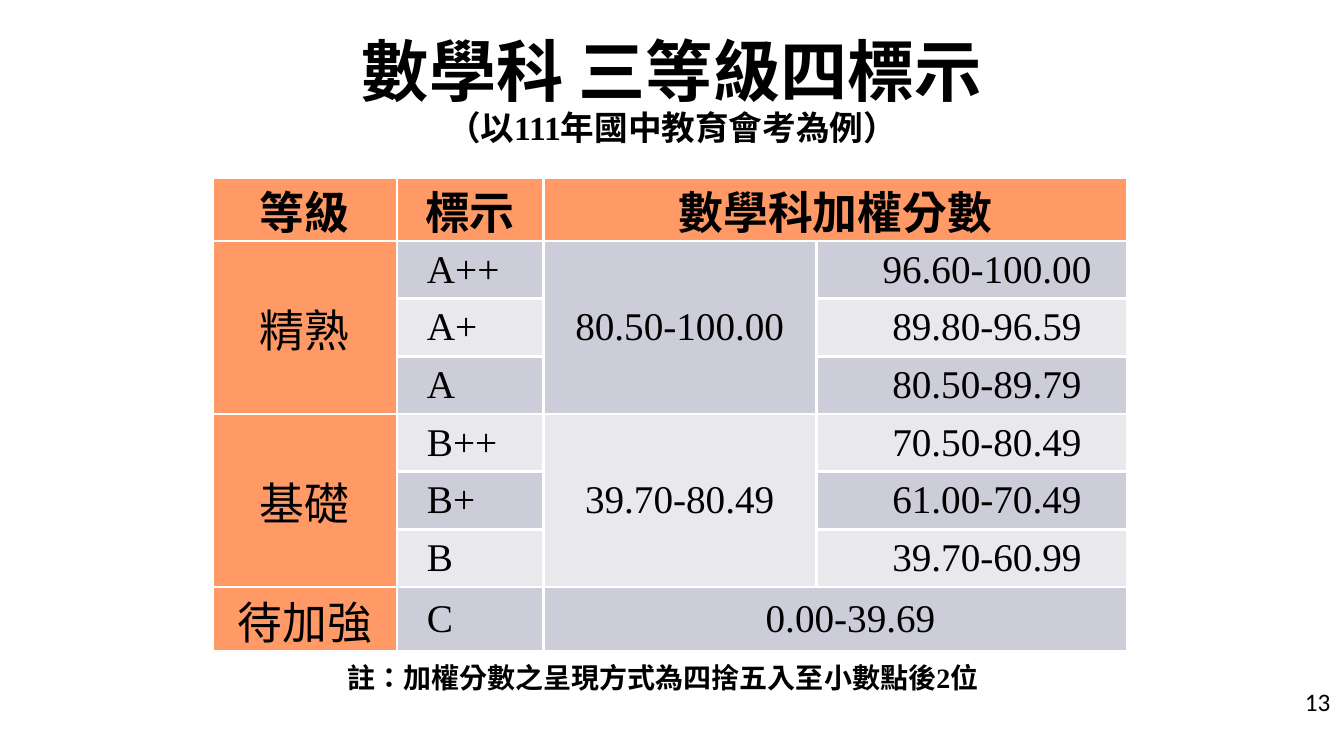
import dataclasses
import typing

import lxml.etree
import pptx
import pptx.dml.color
import pptx.enum.lang
import pptx.enum.text
import pptx.oxml.ns
import pptx.util

Pt = pptx.util.Pt
RGB = pptx.dml.color.RGBColor
Align = pptx.enum.text.PP_ALIGN
Anchor = pptx.enum.text.MSO_ANCHOR
Lang = pptx.enum.lang.MSO_LANGUAGE_ID
qn = pptx.oxml.ns.qn

BLACK = RGB(0x00, 0x00, 0x00)
WHITE = RGB(0xFF, 0xFF, 0xFF)
ORANGE = RGB(0xFF, 0x99, 0x66)
DARK = RGB(0xCD, 0xCD, 0xDA)
LIGHT = RGB(0xE8, 0xE8, 0xED)

SERIF = "Times New Roman"
SANS = "Noto Sans CJK SC"

WIDTHS = (131.5, 104.5, 195, 222.5)
HEIGHTS = (45.5, *[41.2] * 6, 46)
EDGE = 1.5


@dataclasses.dataclass
class Entry:
    row: int
    col: int
    text: str
    size: float = 28
    bold: bool = False
    align: Align = Align.CENTER
    left: float = EDGE
    right: float = EDGE
    down: int = 1
    across: int = 1


@dataclasses.dataclass
class Level:
    name: str
    total: str
    marks: tuple[tuple[str, str], ...]


LEVELS = (
    Level("精熟", "80.50-100.00", (
        ("A++", "96.60-100.00"), ("A+", "89.80-96.59"), ("A", "80.50-89.79"))),
    Level("基礎", "39.70-80.49", (
        ("B++", "70.50-80.49"), ("B+", "61.00-70.49"), ("B", "39.70-60.99"))),
    Level("待加強", "0.00-39.69", (("C", ""),)),
)


def write(para: typing.Any, text: str, *, size: float, font: str = SERIF,
          bold: bool = False, align: Align = Align.LEFT) -> None:
    """Add a run to the paragraph, with the sans face for Chinese letters."""
    para.alignment = align
    run = para.add_run()
    run.text = text
    run.font.size = Pt(size)
    run.font.name = font
    run.font.bold = bold
    run.font.color.rgb = BLACK
    run.font.language_id = Lang.TRADITIONAL_CHINESE
    latin = run.font._element.find(qn("a:latin"))
    east = lxml.etree.Element(qn("a:ea"), typeface=SANS)
    latin.addnext(east)


def add_box(slide: typing.Any, left: float, top: float, width: float,
            height: float, anchor: Anchor = Anchor.TOP) -> typing.Any:
    frame = slide.shapes.add_textbox(
        Pt(left), Pt(top), Pt(width), Pt(height)).text_frame
    frame.word_wrap = True
    frame.vertical_anchor = anchor
    return frame


def rule(cell: typing.Any) -> None:
    """Give the cell white borders on all four sides."""
    props = cell._tc.get_or_add_tcPr()
    for spot, side in enumerate(("lnL", "lnR", "lnT", "lnB")):
        line = lxml.etree.Element(qn(f"a:{side}"), w=str(Pt(2.25)))
        fill = lxml.etree.SubElement(line, qn("a:solidFill"))
        lxml.etree.SubElement(fill, qn("a:srgbClr"), val=str(WHITE))
        props.insert(spot, line)


def list_cells() -> list[Entry]:
    cells = [
        Entry(0, 0, "等級", 32, True),
        Entry(0, 1, "標示", 32, True),
        Entry(0, 2, "數學科加權分數", 32, True, across=2),
    ]
    row = 1
    for level in LEVELS:
        count = len(level.marks)
        single = count == 1
        cells.append(Entry(row, 0, level.name, 32, down=count))
        cells.append(Entry(row, 2, level.total, down=count,
                           across=2 if single else 1,
                           left=23 if single else EDGE))
        for step, (mark, score) in enumerate(level.marks):
            cells.append(Entry(row + step, 1, mark,
                               align=Align.LEFT, left=21.5))
            if score:
                cells.append(Entry(row + step, 3, score, left=26.5, right=5))
        row += count
    return cells


def draw_table(slide: typing.Any) -> None:
    table = slide.shapes.add_table(
        len(HEIGHTS), len(WIDTHS), Pt(152), Pt(126.75),
        Pt(sum(WIDTHS)), Pt(sum(HEIGHTS))).table
    table.first_row = False
    table.horz_banding = False
    for col, width in zip(table.columns, WIDTHS):
        col.width = Pt(width)
    for row, height in zip(table.rows, HEIGHTS):
        row.height = Pt(height)
    for r in range(len(HEIGHTS)):
        for c in range(len(WIDTHS)):
            cell = table.cell(r, c)
            cell.fill.solid()
            band = DARK if r % 2 else LIGHT
            cell.fill.fore_color.rgb = ORANGE if r == 0 or c == 0 else band
            rule(cell)
    for item in list_cells():
        cell = table.cell(item.row, item.col)
        if item.down > 1 or item.across > 1:
            cell.merge(table.cell(item.row + item.down - 1,
                                  item.col + item.across - 1))
        cell.vertical_anchor = Anchor.MIDDLE
        cell.margin_left, cell.margin_right = Pt(item.left), Pt(item.right)
        cell.margin_top = cell.margin_bottom = Pt(0)
        write(cell.text_frame.paragraphs[0], item.text, size=item.size,
              bold=item.bold, align=item.align)


def draw_title(slide: typing.Any) -> None:
    frame = add_box(slide, 48, 21.5, 864, 90, Anchor.MIDDLE)
    para = frame.paragraphs[0]
    para.line_spacing = 0.9
    write(para, "數學科 三等級四標示", size=48, font=SANS, bold=True,
          align=Align.CENTER)
    para.add_line_break()
    parts = (("（以", SANS), ("111", SERIF), ("年國中教育會考為例）", SANS))
    for text, font in parts:
        write(para, text, size=24, font=font, bold=True, align=Align.CENTER)


def main() -> None:
    deck = pptx.Presentation()
    deck.slide_width, deck.slide_height = Pt(960), Pt(540)
    slide = deck.slides.add_slide(deck.slide_layouts[6])
    draw_title(slide)
    draw_table(slide)
    note = add_box(slide, 241, 468, 598, 31.5)
    write(note.paragraphs[0], "註：加權分數之呈現方式為四捨五入至小數點後2位",
          size=20, bold=True)
    page = add_box(slide, 733.5, 486.5, 224, 29, Anchor.MIDDLE)
    write(page.paragraphs[0], "13", size=18, font="Calibri",
          align=Align.RIGHT)
    deck.save("out.pptx")


if __name__ == "__main__":
    main()
